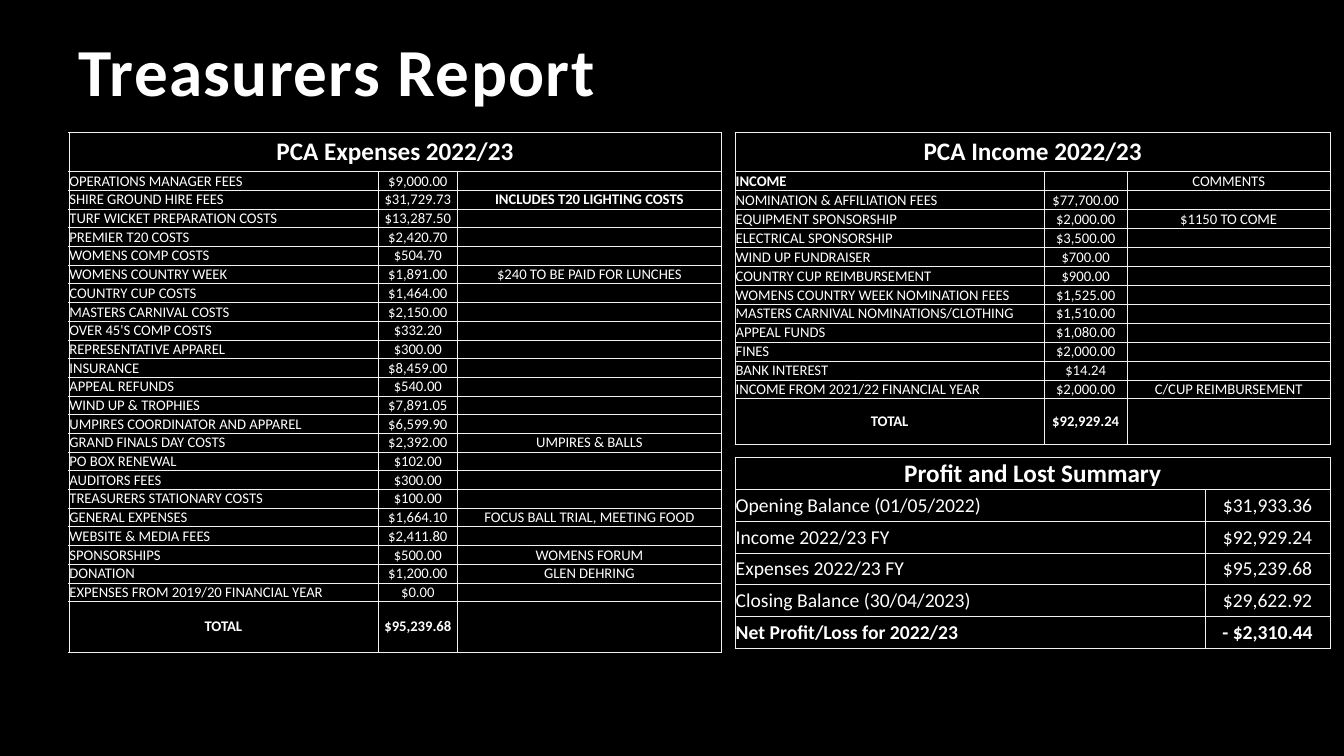
from lxml import etree
from pptx import Presentation
from pptx.dml.color import RGBColor
from pptx.enum.text import MSO_ANCHOR, PP_ALIGN
from pptx.oxml.ns import qn
from pptx.util import Cm, Pt

COLOURS = {"background": "000000", "text": "FFFFFF", "border": "F2F2F2"}
FONT = "Calibri"
HEADING_SIZE = 18

# Boxes in centimetres: left, top, width, height
TITLE_BOX = (1.73, 1.07, 24.89, 1.85)
EXPENSES_BOX = (1.73, 3.33, 16.45, 13.1)
INCOME_BOX = (18.52, 3.33, 15.01, 7.86)
SUMMARY_BOX = (18.52, 11.53, 15.01, 4.8)

EXPENSES = [
    ("OPERATIONS MANAGER FEES", "$9,000.00", ""),
    ("SHIRE GROUND HIRE FEES", "$31,729.73", "INCLUDES T20 LIGHTING COSTS"),
    ("TURF WICKET PREPARATION COSTS", "$13,287.50", ""),
    ("PREMIER T20 COSTS", "$2,420.70", ""),
    ("WOMENS COMP COSTS", "$504.70", ""),
    ("WOMENS COUNTRY WEEK", "$1,891.00", "$240 TO BE PAID FOR LUNCHES"),
    ("COUNTRY CUP COSTS", "$1,464.00", ""),
    ("MASTERS CARNIVAL COSTS", "$2,150.00", ""),
    ("OVER 45'S COMP COSTS", "$332.20", ""),
    ("REPRESENTATIVE APPAREL", "$300.00", ""),
    ("INSURANCE", "$8,459.00", ""),
    ("APPEAL REFUNDS", "$540.00", ""),
    ("WIND UP & TROPHIES", "$7,891.05", ""),
    ("UMPIRES COORDINATOR AND APPAREL", "$6,599.90", ""),
    ("GRAND FINALS DAY COSTS", "$2,392.00", "UMPIRES & BALLS"),
    ("PO BOX RENEWAL", "$102.00", ""),
    ("AUDITORS FEES", "$300.00", ""),
    ("TREASURERS STATIONARY COSTS", "$100.00", ""),
    ("GENERAL EXPENSES", "$1,664.10", "FOCUS BALL TRIAL, MEETING FOOD"),
    ("WEBSITE & MEDIA FEES", "$2,411.80", ""),
    ("SPONSORSHIPS", "$500.00", "WOMENS FORUM"),
    ("DONATION", "$1,200.00", "GLEN DEHRING"),
    ("EXPENSES FROM 2019/20 FINANCIAL YEAR", "$0.00", ""),
    ("TOTAL", "$95,239.68", ""),
]
INCOME = [
    ("INCOME", "", "COMMENTS"),
    ("NOMINATION & AFFILIATION FEES", "$77,700.00", ""),
    ("EQUIPMENT SPONSORSHIP", "$2,000.00", "$1150 TO COME"),
    ("ELECTRICAL SPONSORSHIP", "$3,500.00", ""),
    ("WIND UP FUNDRAISER", "$700.00", ""),
    ("COUNTRY CUP REIMBURSEMENT", "$900.00", ""),
    ("WOMENS COUNTRY WEEK NOMINATION FEES", "$1,525.00", ""),
    ("MASTERS CARNIVAL NOMINATIONS/CLOTHING", "$1,510.00", ""),
    ("APPEAL FUNDS", "$1,080.00", ""),
    ("FINES", "$2,000.00", ""),
    ("BANK INTEREST", "$14.24", ""),
    ("INCOME FROM 2021/22 FINANCIAL YEAR", "$2,000.00", "C/CUP REIMBURSEMENT"),
    ("TOTAL", "$92,929.24", ""),
]
SUMMARY = [
    ("Opening Balance (01/05/2022)", "$31,933.36"),
    ("Income 2022/23 FY", "$92,929.24"),
    ("Expenses 2022/23 FY", "$95,239.68"),
    ("Closing Balance (30/04/2023)", "$29,622.92"),
    ("Net Profit/Loss for 2022/23", "- $2,310.44"),
]
BOLD_ENTRIES = {"INCLUDES T20 LIGHTING COSTS", "INCOME"}


def colour(name):
    return RGBColor.from_string(COLOURS[name])


def format_span(span, size, bold):
    span.font.name = FONT
    span.font.size = Pt(size)
    span.font.bold = bold
    span.font.color.rgb = colour("text")


def add_borders(cell):
    properties = cell._tc.get_or_add_tcPr()
    for side in ("a:lnL", "a:lnR", "a:lnT", "a:lnB"):
        line = etree.SubElement(properties, qn(side), w=str(Pt(0.25)))
        fill = etree.SubElement(line, qn("a:solidFill"))
        etree.SubElement(fill, qn("a:srgbClr"), val=COLOURS["border"])


def fill_cell(cell, text, size, bold, centred, anchor=MSO_ANCHOR.MIDDLE):
    add_borders(cell)
    cell.fill.background()
    cell.margin_left = cell.margin_right = cell.margin_top = Cm(0.02)
    cell.margin_bottom = 0
    cell.vertical_anchor = anchor
    para = cell.text_frame.paragraphs[0]
    para.alignment = PP_ALIGN.CENTER if centred else PP_ALIGN.LEFT
    if text:
        para.text = text
        format_span(para.runs[0], size, bold)
    else:
        # An empty cell keeps the row's text size so the row stays low
        etree.SubElement(para._p, qn("a:endParaRPr"), sz=str(int(size * 100)))


def place_title(page, box):
    frame = page.shapes.add_textbox(*map(Cm, box)).text_frame
    frame.word_wrap = True
    frame.vertical_anchor = MSO_ANCHOR.BOTTOM
    para = frame.paragraphs[0]
    para.text = "Treasurers Report"
    para.line_spacing = 0.9
    format_span(para.runs[0], 48, True)
    para.runs[0]._r.get_or_add_rPr().set("spc", "100")


def place_ledger(page, box, heading, entries, widths, heading_height,
                 last_height, size, body_anchor=MSO_ANCHOR.MIDDLE):
    height = box[3]
    body_count = len(entries) - 1
    body_height = (height - heading_height - last_height) / body_count
    heights = [heading_height] + [body_height] * body_count + [last_height]
    table = page.shapes.add_table(len(heights), len(widths), *map(Cm, box)).table
    table.first_row = table.horz_banding = False
    for column, width in zip(table.columns, widths):
        column.width = Cm(width)
    for row, row_height in zip(table.rows, heights):
        row.height = Cm(row_height)

    # Heading across all columns
    for cell in table.rows[0].cells:
        fill_cell(cell, "", HEADING_SIZE, True, True)
    table.cell(0, 0).merge(table.cell(0, len(widths) - 1))
    para = table.cell(0, 0).text_frame.paragraphs[0]
    para.text = heading
    format_span(para.runs[0], HEADING_SIZE, True)

    # Entries, the last one in bold
    for row_number, entry in enumerate(entries, start=1):
        is_last = row_number == len(entries)
        anchor = MSO_ANCHOR.MIDDLE if is_last else body_anchor
        for column_number, text in enumerate(entry):
            fill_cell(table.cell(row_number, column_number), text, size,
                      is_last or text in BOLD_ENTRIES,
                      column_number > 0 or text == "TOTAL", anchor)


def place_expenses(page, box):
    place_ledger(page, box, "PCA Expenses 2022/23", EXPENSES,
                 (7.8, 2, box[2] - 9.8), 0.99, 1.27, 10.5)


def place_income(page, box):
    place_ledger(page, box, "PCA Income 2022/23", INCOME,
                 (7.8, 2.08, box[2] - 9.88), 0.99, 1.14, 10.5, MSO_ANCHOR.BOTTOM)


def place_summary(page, box):
    row_height = box[3] / (len(SUMMARY) + 1)
    place_ledger(page, box, "Profit and Lost Summary", SUMMARY,
                 (box[2] - 3.17, 3.17), row_height, row_height, 14)


def main():
    deck = Presentation()
    deck.slide_width, deck.slide_height = Cm(33.87), Cm(19.05)
    page = deck.slides.add_slide(deck.slide_layouts[6])
    page.background.fill.solid()
    page.background.fill.fore_color.rgb = colour("background")
    place_title(page, TITLE_BOX)
    place_income(page, INCOME_BOX)
    place_expenses(page, EXPENSES_BOX)
    place_summary(page, SUMMARY_BOX)
    deck.save("out.pptx")


if __name__ == "__main__":
    main()
